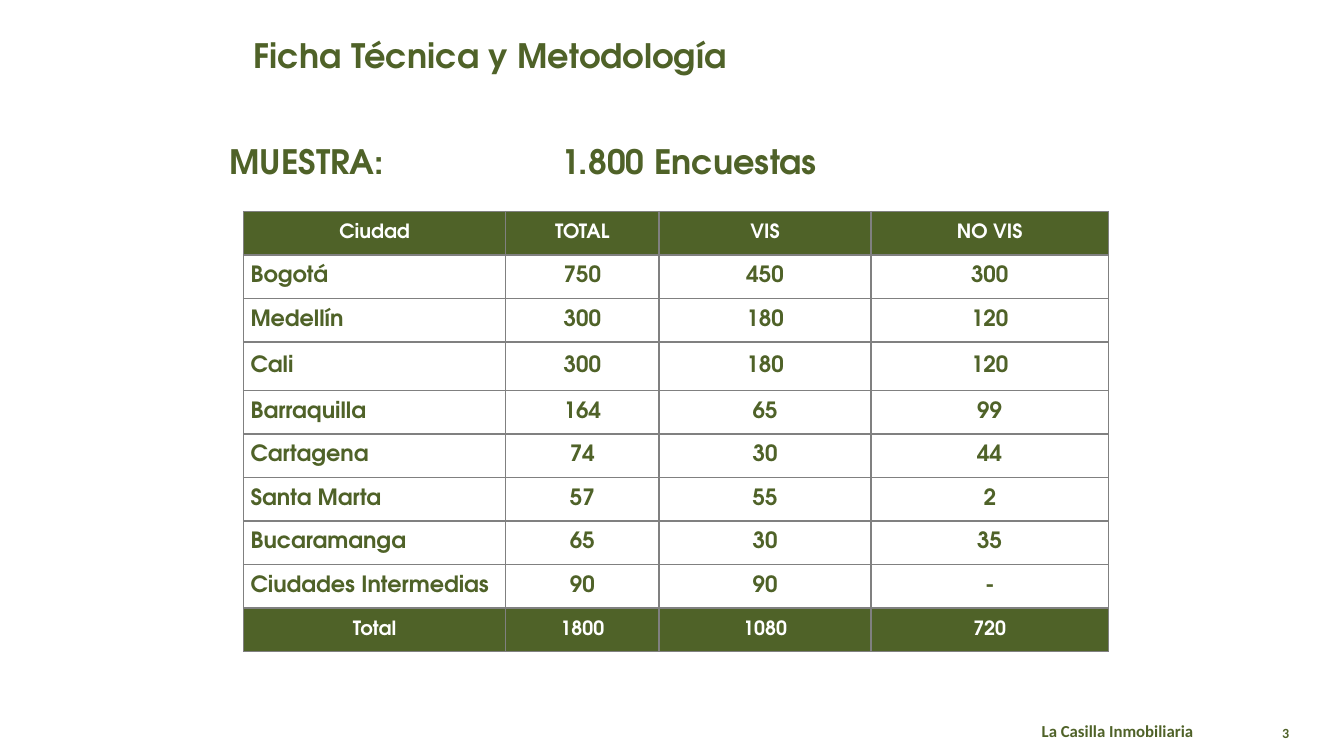
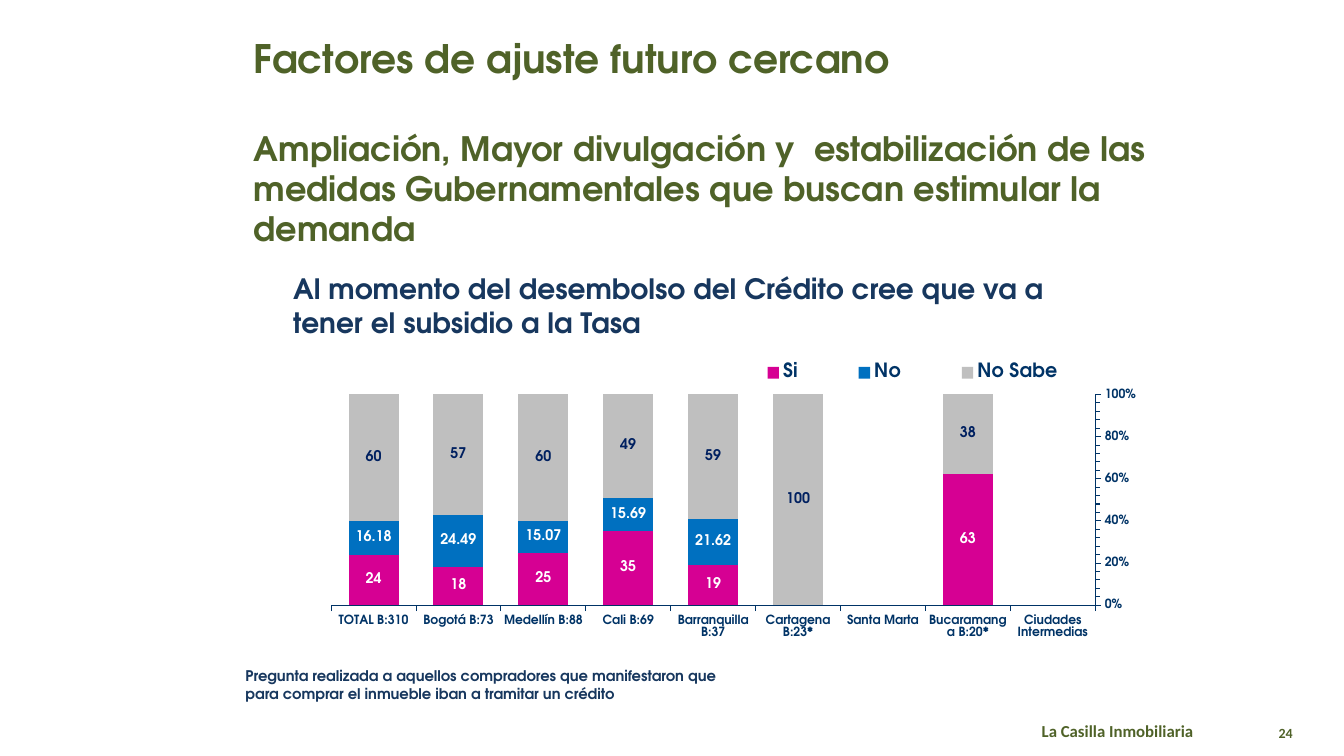
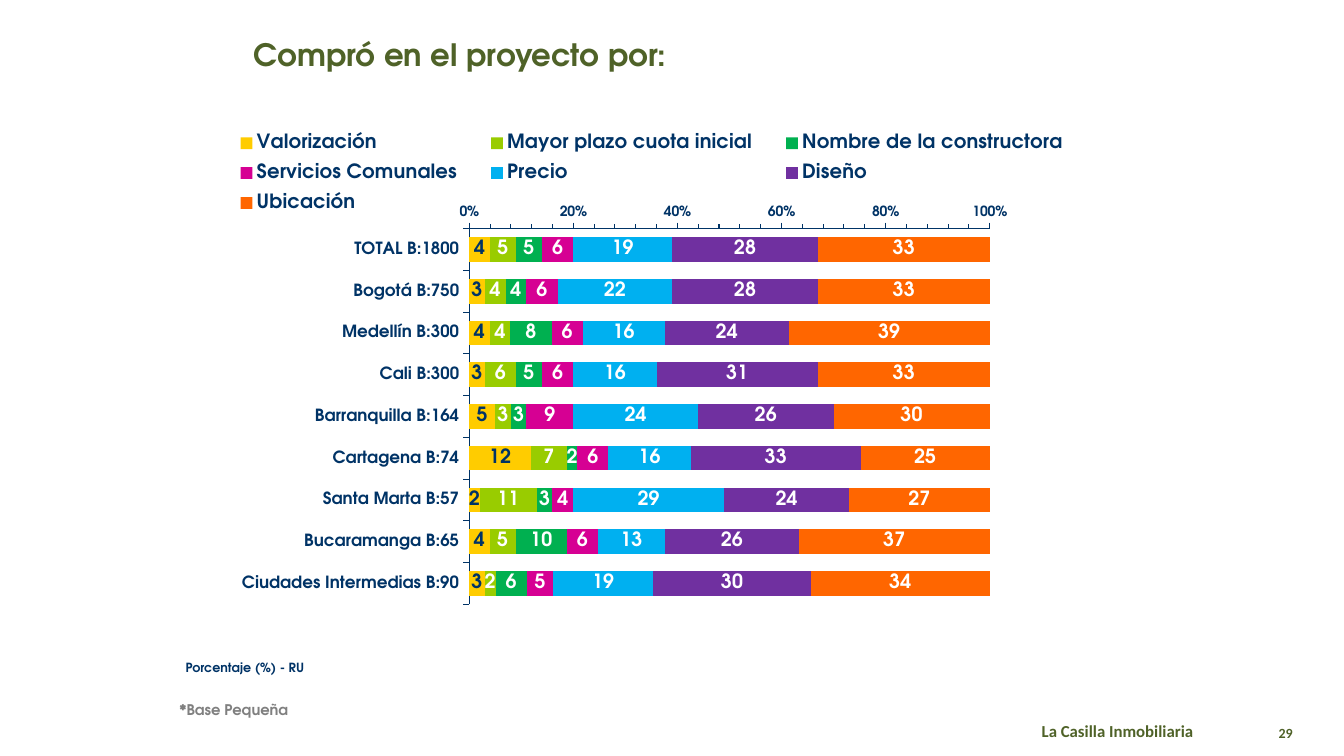
from dataclasses import dataclass

from pptx import Presentation
from pptx.chart.data import CategoryChartData
from pptx.dml.color import RGBColor
from pptx.enum.chart import (XL_AXIS_CROSSES, XL_CHART_TYPE, XL_LABEL_POSITION,
                             XL_LEGEND_POSITION, XL_TICK_MARK)
from pptx.enum.shapes import MSO_SHAPE
from pptx.enum.text import MSO_ANCHOR, MSO_AUTO_SIZE, PP_ALIGN
from pptx.oxml import parse_xml
from pptx.oxml.ns import nsdecls, qn
from pptx.util import Pt

LEFT, CENTER = PP_ALIGN.LEFT, PP_ALIGN.CENTER
TOP, MIDDLE = MSO_ANCHOR.TOP, MSO_ANCHOR.MIDDLE
NO_AUTOFIT = MSO_AUTO_SIZE.NONE
ELLIPSE = MSO_SHAPE.OVAL
COLUMNS, BARS = XL_CHART_TYPE.COLUMN_STACKED_100, XL_CHART_TYPE.BAR_STACKED_100
AXIS_START = XL_AXIS_CROSSES.MINIMUM
LEGEND_TOP = XL_LEGEND_POSITION.TOP
LABEL_CENTER = XL_LABEL_POSITION.CENTER
TICK_OUT = XL_TICK_MARK.OUTSIDE
TITLE_ONLY = 5
MARGIN = 174


@dataclass(frozen=True)
class Theme:
    font: str = "TeX Gyre Adventor"
    footer_font: str = "Calibri"
    green: str = "4F6228"
    white: str = "FFFFFF"
    navy: str = "17375E"
    chart_blue: str = "003366"
    label_blue: str = "002060"
    gray: str = "808080"
    yellow: str = "FFCC00"
    lime: str = "99CC00"
    emerald: str = "00B050"
    magenta: str = "D60093"
    sky: str = "00B0F0"
    blue: str = "0070C0"
    purple: str = "7030A0"
    orange: str = "FF6600"
    silver: str = "BFBFBF"
    large_title: float = 28
    heading: float = 24
    small_title: float = 22
    question: float = 20
    table_body: float = 16
    table_head: float = 14
    legend: float = 14
    brand: float = 12
    note: float = 10.5
    page: float = 10
    small: float = 9


T = Theme()

SAMPLE = [
    ("Ciudad", "TOTAL", "VIS", "NO VIS"),
    ("Bogotá", "750", "450", "300"),
    ("Medellín", "300", "180", "120"),
    ("Cali", "300", "180", "120"),
    ("Barraquilla", "164", "65", "99"),
    ("Cartagena", "74", "30", "44"),
    ("Santa Marta", "57", "55", "2"),
    ("Bucaramanga", "65", "30", "35"),
    ("Ciudades Intermedias", "90", "90", "-"),
    ("Total", "1800", "1080", "720"),
]

SUBSIDY_CITIES = ["Ciudades Intermedias", "Bucaramanga B:20*", "Santa Marta",
                  "Cartagena B:23*", "Barranquilla B:37", "Cali B:69",
                  "Medellín B:88", "Bogotá B:73", "TOTAL B:310"]
# Each series: name, values, fill, label colour, label format
SUBSIDY = [
    ("Si", (None, 63, None, None, 19, 35, 25, 18, 24), T.magenta, T.white, "0"),
    ("No", (None, None, None, None, 21.62, 15.69, 15.07, 24.49, 16.18),
     T.blue, T.white, "General"),
    ("No Sabe", (None, 38, None, 100, 59, 49, 60, 57, 60),
     T.silver, T.label_blue, "0"),
]

REASON_CITIES = ["TOTAL B:1800", "Bogotá B:750", "Medellín B:300", "Cali B:300",
                 "Barranquilla B:164", "Cartagena B:74", "Santa Marta B:57",
                 "Bucaramanga B:65", "Ciudades Intermedias B:90"]
REASONS = [
    ("Valorización", (4, 3, 4, 3, 5, 12, 2, 4, 3), T.yellow, T.chart_blue, "0"),
    ("Mayor plazo cuota inicial", (5, 4, 4, 6, 3, 7, 11, 5, 2),
     T.lime, T.white, "0"),
    ("Nombre de la constructora", (5, 4, 8, 5, 3, 2, 3, 10, 6),
     T.emerald, T.white, "0"),
    ("Servicios Comunales", (6, 6, 6, 6, 9, 6, 4, 6, 5),
     T.magenta, T.white, "0"),
    ("Precio", (19, 22, 16, 16, 24, 16, 29, 13, 19), T.sky, T.white, "0"),
    ("Diseño", (28, 28, 24, 31, 26, 33, 24, 26, 30), T.purple, T.white, "0"),
    ("Ubicación", (33, 33, 39, 33, 30, 25, 27, 37, 34), T.orange, T.white, "0"),
]


def rgb(color):
    return RGBColor.from_string(color)


def style_font(font, size, color, name=T.font):
    font.name = name
    font.size = Pt(size)
    font.bold = True
    font.color.rgb = rgb(color)


def write(frame, text, size, color, align=LEFT, name=T.font):
    """Put one formatted paragraph in a text frame and return it."""
    frame.text = text
    paragraph = frame.paragraphs[0]
    paragraph.alignment = align
    for run in paragraph.runs:
        style_font(run.font, size, color, name)
    return paragraph


def add_text(slide, box, text, size, color, name=T.font, wrap=True):
    frame = slide.shapes.add_textbox(*map(Pt, box)).text_frame
    frame.word_wrap = wrap
    return write(frame, text, size, color, name=name)


def add_footer(slide, number):
    badge = slide.shapes.add_shape(ELLIPSE, Pt(895.7), Pt(510.5), Pt(45.4), Pt(26))
    badge.shadow.inherit = False
    badge.fill.solid()
    badge.fill.fore_color.rgb = rgb(T.white)
    badge.line.color.rgb = rgb(T.white)
    badge.line.width = Pt(2)
    frame = badge.text_frame
    frame.margin_left = frame.margin_right = 0
    frame.vertical_anchor = MIDDLE
    write(frame, str(number), T.page, T.green, CENTER, T.footer_font)
    add_text(slide, (737, 511.2, 173.5, 23.8), "La Casilla Inmobiliaria",
             T.brand, T.green, T.footer_font)


def add_page(deck, number, heading, size):
    """Add a slide with its title and footer; larger titles start higher."""
    slide = deck.slides.add_slide(deck.slide_layouts[TITLE_ONLY])
    title = slide.shapes.title
    title.left, title.top, title.width, title.height = map(
        Pt, (MARGIN, 27.6 - size / 4, 666, 41))
    frame = title.text_frame
    frame.auto_size = NO_AUTOFIT
    frame.vertical_anchor = TOP
    write(frame, heading, size, T.green)
    add_footer(slide, number)
    return slide


def add_borders(cell):
    properties = cell._tc.get_or_add_tcPr()
    for side in "LRTB":
        properties.append(parse_xml(
            f'<a:ln{side} {nsdecls("a")} w="{Pt(1)}"><a:solidFill>'
            f'<a:srgbClr val="{T.gray}"/></a:solidFill></a:ln{side}>'))


def format_cell(cell, text, strong, align):
    add_borders(cell)
    cell.margin_left = cell.margin_right = Pt(5)
    cell.margin_top = cell.margin_bottom = Pt(3.6)
    cell.vertical_anchor = MIDDLE
    if strong:
        cell.fill.solid()
        cell.fill.fore_color.rgb = rgb(T.green)
        write(cell.text_frame, text, T.table_head, T.white, align)
    else:
        cell.fill.background()
        write(cell.text_frame, text, T.table_body, T.green, align)


def add_sample_table(slide, left, top, widths, heights):
    table = slide.shapes.add_table(
        len(heights), len(widths), Pt(left), Pt(top),
        Pt(sum(widths)), Pt(sum(heights))).table
    table.first_row = table.horz_banding = False
    for column, width in zip(table.columns, widths):
        column.width = Pt(width)
    for row, height in zip(table.rows, heights):
        row.height = Pt(height)
    for r, values in enumerate(SAMPLE):
        strong = r in (0, len(SAMPLE) - 1)
        for c, value in enumerate(values):
            align = CENTER if strong or c else LEFT
            format_cell(table.cell(r, c), value, strong, align)


def set_layout(parent, index, x, y, w, h, inner=False):
    """Fix a chart part at fractions of the chart area."""
    for old in parent.findall(qn("c:layout")):
        parent.remove(old)
    target = '<c:layoutTarget val="inner"/>' if inner else ""
    parent.insert(index, parse_xml(
        f'<c:layout {nsdecls("c")}><c:manualLayout>{target}'
        f'<c:xMode val="edge"/><c:yMode val="edge"/><c:x val="{x}"/>'
        f'<c:y val="{y}"/><c:w val="{w}"/><c:h val="{h}"/>'
        f'</c:manualLayout></c:layout>'))


def style_axis(axis, size):
    axis.has_major_gridlines = False
    axis.major_tick_mark = TICK_OUT
    axis.format.line.color.rgb = rgb(T.chart_blue)
    axis.format.line.width = Pt(0.75)
    style_font(axis.tick_labels.font, size, T.chart_blue)
    text_body = axis._element.find(qn("c:txPr")).find(qn("a:bodyPr"))
    text_body.set("rot", "0")
    text_body.set("vert", "horz")


def style_axes(chart, category_size, value_size):
    categories, values = chart.category_axis, chart.value_axis
    style_axis(categories, category_size)
    categories.reverse_order = True
    categories.crosses = AXIS_START
    style_axis(values, value_size)
    values.minor_tick_mark = TICK_OUT
    values.minimum_scale, values.maximum_scale = 0, 1
    values.major_unit, values.minor_unit = 0.2, 0.04
    values.tick_labels.number_format = "0%"
    values.tick_labels.number_format_is_linked = False


def style_series(series, fill, label_color, label_format, label_size):
    series.format.fill.solid()
    series.format.fill.fore_color.rgb = rgb(fill)
    labels = series.data_labels
    labels.show_value = True
    labels.position = LABEL_CENTER
    labels.number_format = label_format
    labels.number_format_is_linked = False
    style_font(labels.font, label_size, label_color)


def add_share_chart(slide, kind, box, cities, answers, axis_sizes, label_size,
                    plot_area, legend_area):
    data = CategoryChartData()
    data.categories = cities
    for name, values, *_ in answers:
        data.add_series(name, values)
    chart = slide.shapes.add_chart(kind, *map(Pt, box), data).chart
    chart.has_title = False
    style_font(chart.font, T.brand, T.chart_blue)
    style_axes(chart, *axis_sizes)
    plot = chart.plots[0]
    plot.gap_width, plot.overlap = 70, 100
    plot.vary_by_categories = False
    for series, (_, _, *look) in zip(plot.series, answers):
        style_series(series, *look, label_size)
    chart.has_legend = True
    legend = chart.legend
    legend.position = LEGEND_TOP
    legend.include_in_layout = False
    style_font(legend.font, T.legend, T.chart_blue)
    set_layout(legend._element, 1, *legend_area)
    set_layout(chart._chartSpace.chart.plotArea, 0, *plot_area, inner=True)


def build_sample(deck):
    slide = add_page(deck, 3, "Ficha Técnica y Metodología", T.heading)
    sample = add_text(slide, (157, 77, 623.5, 57),
                      "MUESTRA:\t1.800 Encuestas", T.heading, T.green)
    sample.line_spacing = 1.7
    sample._p.get_or_add_pPr().append(parse_xml(
        f'<a:tabLst {nsdecls("a")}><a:tab pos="{Pt(237)}" algn="l"/></a:tabLst>'))
    heights = [34.6 if row[0] == "Cali" else 31.1 for row in SAMPLE]
    add_sample_table(slide, MARGIN, 151, (187.2, 109.6, 151.4, 169.6), heights)


def build_subsidy(deck):
    slide = add_page(deck, 24, "Factores de ajuste futuro cercano", T.large_title)
    add_share_chart(slide, COLUMNS, (188, 234, 623.5, 239), SUBSIDY_CITIES,
                    SUBSIDY, (T.small, T.small), T.note,
                    (0.08, 0.2, 0.9, 0.63), (0.53, 0.09, 0.5, 0.09))
    add_text(slide, (MARGIN, 87.5, 666, 95),
             "Ampliación, Mayor divulgación y  estabilización de las medidas "
             "Gubernamentales que buscan estimular la demanda",
             T.heading, T.green)
    add_text(slide, (202.3, 190.5, 595.4, 55.4),
             "Al momento del desembolso del Crédito cree que va a tener el "
             "subsidio a la Tasa", T.question, T.navy)
    add_text(slide, (168.3, 473, 360, 32.4),
             "Pregunta realizada a aquellos compradores que manifestaron que "
             "para comprar el inmueble iban a tramitar un crédito",
             T.note, T.navy)


def build_reasons(deck):
    slide = add_page(deck, 29, "Compró en el proyecto por:", T.small_title)
    add_share_chart(slide, BARS, (139.5, 84, 652.3, 378), REASON_CITIES,
                    REASONS, (T.brand, T.page), T.legend,
                    (0.3, 0.21, 0.57, 0.71), (0.02, 0.01, 0.96, 0.19))
    add_text(slide, (125.5, 468, 130, 18), "Porcentaje (%) - RU",
             T.small, T.chart_blue)
    add_text(slide, (121, 496.8, 93, 20), "*Base Pequeña",
             T.note, T.gray, wrap=False)


def main():
    deck = Presentation()
    deck.slide_width, deck.slide_height = Pt(960), Pt(540)
    build_sample(deck)
    build_subsidy(deck)
    build_reasons(deck)
    deck.save("out.pptx")


if __name__ == "__main__":
    main()
